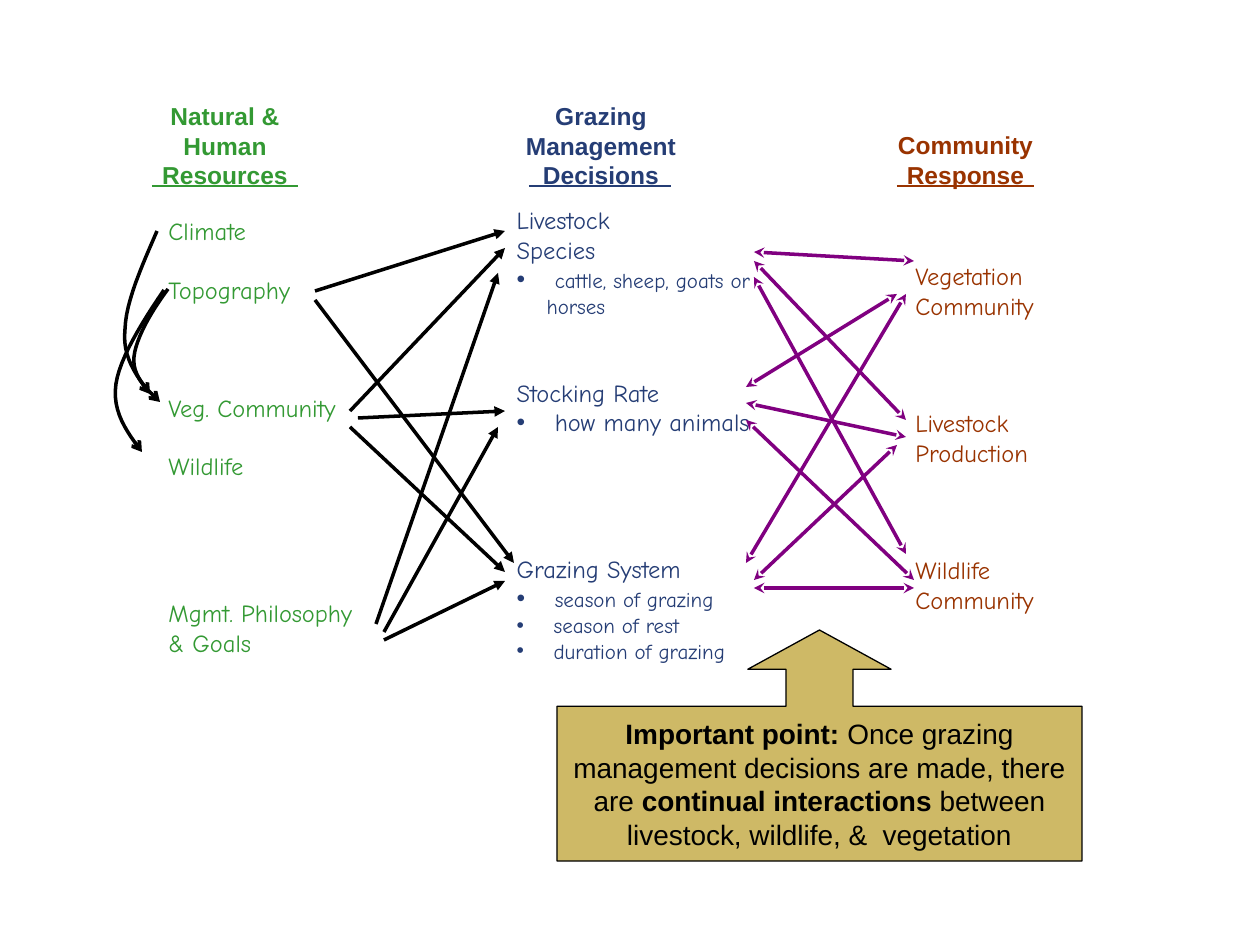
from lxml.etree import SubElement
from pptx import Presentation
from pptx.dml.color import RGBColor
from pptx.enum.shapes import MSO_CONNECTOR, MSO_SHAPE
from pptx.enum.text import MSO_ANCHOR, MSO_AUTO_SIZE, PP_ALIGN
from pptx.oxml.ns import qn
from pptx.util import Emu, Pt

PX = 914400 / 126
HEX = {"green": "339933", "blue": "253D75", "rust": "993300",
       "black": "000000", "purple": "800080", "gold": "CEB966"}
RGB = {name: RGBColor.from_string(code) for name, code in HEX.items()}
LEAD = 1.2  # line height per point of text


def write(frame, paras, color, face, size, form):
    """Fill a frame; a para is (runs, space before, bullet, line size)."""
    for key, val in {"auto_size": MSO_AUTO_SIZE.NONE, "word_wrap": form["wrap"],
                     "vertical_anchor": form["anchor"]}.items():
        setattr(frame, key, val)
    for num, (runs, before, bullet, high) in enumerate(paras):
        para = frame.paragraphs[0] if num == 0 else frame.add_paragraph()
        for key, val in {"alignment": form["align"], "space_before": Pt(before),
                         "space_after": Pt(0), "line_spacing": Pt(high * LEAD)}.items():
            setattr(para, key, val)
        props = para._p.get_or_add_pPr()
        left = round(30 * PX) if bullet else 0
        props.set("marL", str(left))
        props.set("indent", str(-left))
        if bullet:
            SubElement(props, qn("a:buChar")).set("char", "•")
        else:
            SubElement(props, qn("a:buNone"))
        for text, *opts in runs:
            if text == "\v":
                para.add_line_break()
                continue
            run = para.add_run()
            run.text = text
            font = {"name": face, "size": Pt(size), "bold": form["bold"]}
            font.update(*opts)
            for key, val in font.items():
                setattr(run.font, key, val)
            run.font.color.rgb = RGB[color]


def stroke(shape, color, width, head=None, tail=None):
    """Set line colour, width and arrowheads, and drop the shadow."""
    shape.line.color.rgb = RGB[color]
    shape.line.width = Pt(width)
    props = shape._element.spPr
    line = props.find(qn("a:ln"))
    for end, kind in (("a:headEnd", head), ("a:tailEnd", tail)):
        if kind:
            SubElement(line, qn(end)).set("type", kind)
    SubElement(props, qn("a:effectLst"))


deck = Presentation()
deck.slide_width, deck.slide_height = Emu(9144000), Emu(6858000)
slide = deck.slides.add_slide(deck.slide_layouts[1])
shapes = slide.shapes
title, body = slide.placeholders

HEAD = {"wrap": False, "anchor": MSO_ANCHOR.TOP, "align": PP_ALIGN.CENTER, "bold": True}
LIST = {"wrap": True, "anchor": MSO_ANCHOR.TOP, "align": PP_ALIGN.LEFT, "bold": False}
NOTE = {"wrap": True, "anchor": MSO_ANCHOR.MIDDLE, "align": PP_ALIGN.CENTER, "bold": False}
ROW = 14 * LEAD
SMALL = {"size": Pt(12)}

# Column headings, each with a rule under its last line
heads = [
    (None, (136, 95, 178, 101), "green", ["Natural &", "Human", "Resources"], (152, 298)),
    (title, (513, 95, 176, 102), "blue", ["Grazing", "Management", "Decisions"], (529, 671)),
    (None, (881, 124, 169, 72), "rust", ["Community", "Response"], (897, 1034)),
]
for box, area, color, lines, (x1, x2) in heads:
    area = [round(v * PX) for v in area]
    box = box or shapes.add_textbox(*area)
    box.left, box.top, box.width, box.height = area
    write(box.text_frame, [([(line,)], 0, False, 14) for line in lines],
          color, "Arial", 14, HEAD)
    ends = [round(v * PX) for v in (x1, 186, x2, 186)]
    stroke(shapes.add_connector(MSO_CONNECTOR.STRAIGHT, *ends), color, 1)

# Column lists, with gaps counted in rows
left = [("Climate", 0), ("Topography", 1), ("Veg. Community", 3), ("Wildlife", 1),
        ("Mgmt. Philosophy", 4), ("& Goals", 0)]
right = [("Vegetation Community", 0), ("Livestock Production", 3), ("Wildlife Community", 3)]
mid = [
    ([("Livestock",), ("\v",), ("Species",)], 0, False, 14),
    ([(" ",), ("cattle, sheep, goats or horses", SMALL)], 2.4, True, 12),
    ([("Stocking Rate",)], 2 * ROW, False, 14),
    ([(" how many animals",)], 0, True, 14),
    ([("Grazing System",)], 4 * ROW, False, 14),
    ([(" ",), ("season of grazing", SMALL)], 2.4, True, 12),
    ([(" season of rest", SMALL)], 0, True, 12),
    ([(" duration of grazing", SMALL)], 0, True, 12),
]
plain = [[([(text,)], gap * ROW, False, 14) for text, gap in items] for items in (left, right)]
lists = [
    (None, (156, 210, 222, 452), "green", plain[0]),
    (body, (504, 199, 294, 475), "blue", mid),
    (None, (903, 255, 199, 364), "rust", plain[1]),
]
for box, area, color, paras in lists:
    area = [round(v * PX) for v in area]
    box = box or shapes.add_textbox(*area)
    box.left, box.top, box.width, box.height = area
    write(box.text_frame, paras, color, "Comic Neue", 14, LIST)

# Curved arrows among the resources: two cubic arcs each
curves = [
    [(157, 231), (142, 266), (126, 301), (125, 329), (122, 357), (136, 375), (150, 394)],
    [(164, 290), (141, 324), (120, 358), (116, 384), (112, 412), (127, 432), (142, 452)],
    [(168, 289), (151, 312), (136, 338), (134, 357), (132, 375), (146, 389), (160, 402)],
]
STEPS = 12
for knots in curves:
    dots = []
    for first in (0, 3):
        arc = knots[first:first + 4]
        for step in range(1, STEPS + 1):
            t = step / STEPS
            mix = ((1 - t) ** 3, 3 * t * (1 - t) ** 2, 3 * t * t * (1 - t), t ** 3)
            dots.append([PX * sum(m * p[axis] for m, p in zip(mix, arc)) for axis in (0, 1)])
    pen = shapes.build_freeform(*[v * PX for v in knots[0]])
    pen.add_line_segments(dots, close=False)
    curve = pen.convert_to_shape()
    curve.fill.background()
    stroke(curve, "black", 2, tail="arrow")

# Straight arrows: resources to decisions, decisions to and from responses
causes = [(315, 291, 505, 231), (315, 300, 514, 563), (350, 411, 505, 248),
          (358, 418, 505, 411), (350, 427, 505, 572), (376, 624, 498, 273),
          (384, 632, 498, 427), (384, 640, 505, 581)]
loops = [(754, 580, 897, 445), (746, 563, 906, 294), (754, 588, 914, 588),
         (746, 387, 897, 294), (746, 403, 906, 437), (746, 420, 914, 580),
         (754, 252, 914, 261), (754, 261, 906, 420), (754, 277, 906, 554)]
for group, color, head, tail in ((causes, "black", None, "triangle"),
                                 (loops, "purple", "stealth", "stealth")):
    for ends in group:
        line = shapes.add_connector(MSO_CONNECTOR.STRAIGHT, *[round(v * PX) for v in ends])
        stroke(line, color, 2, head, tail)

# Callout
area = [round(v * PX) for v in (557, 630, 525, 231)]
note = shapes.add_shape(MSO_SHAPE.UP_ARROW_CALLOUT, *area)
for num, val in enumerate((0.29, 0.31, 0.17, 0.67)):
    note.adjustments[num] = val
note.fill.solid()
note.fill.fore_color.rgb = RGB["gold"]
stroke(note, "black", 0.75)
BOLD = {"bold": True}
write(note.text_frame, [([
    ("Important point:", BOLD),
    (" Once grazing management decisions are made, there are ",),
    ("continual interactions", BOLD),
    (" between livestock, wildlife, &  vegetation",),
], 0, False, 16)], "black", "Arial", 16, NOTE)

deck.save("out.pptx")
